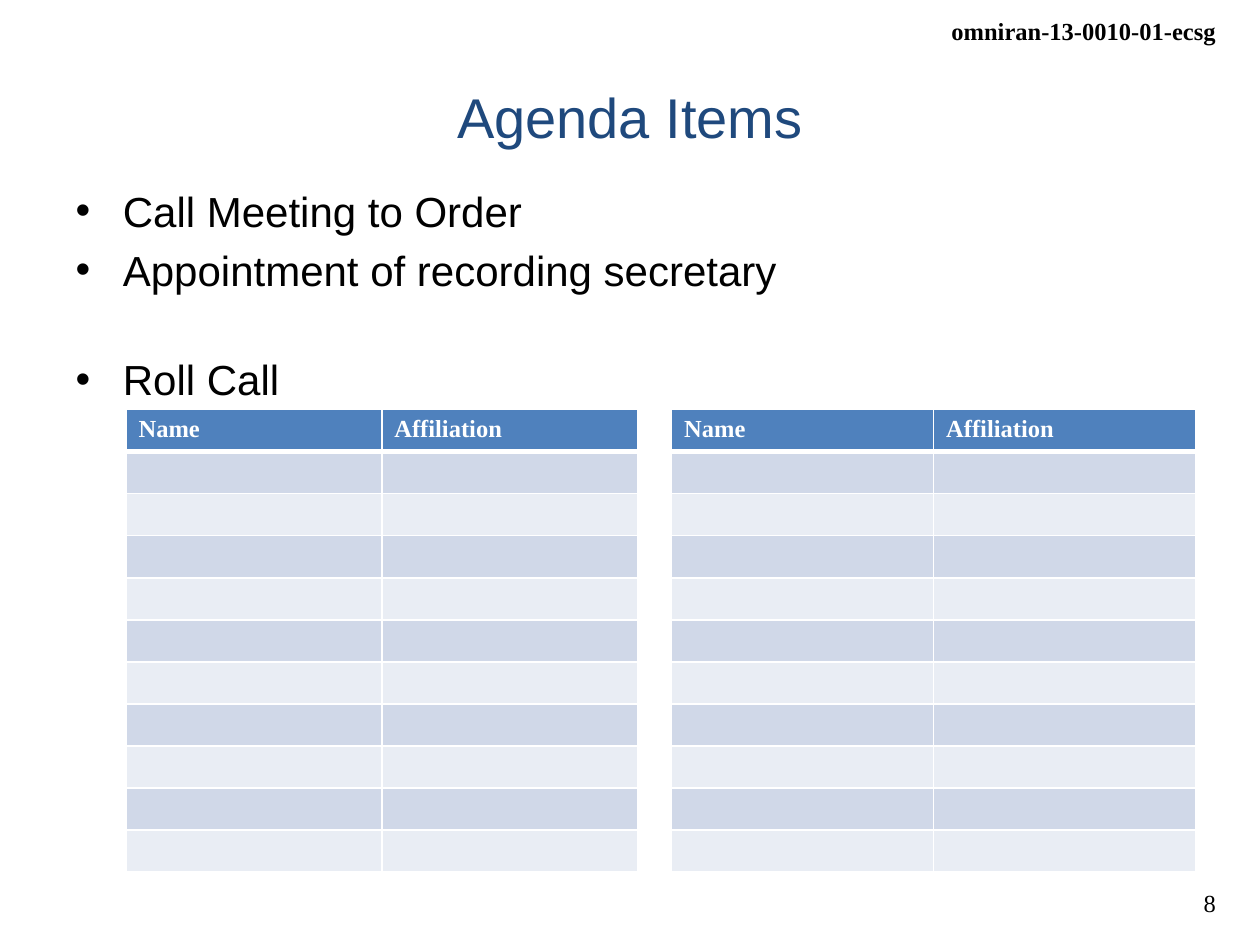
from lxml.etree import SubElement
from pptx import Presentation
from pptx.dml.color import RGBColor
from pptx.enum.text import MSO_ANCHOR, PP_ALIGN
from pptx.oxml.ns import qn
from pptx.util import Inches, Pt

BLACK = RGBColor(0x00, 0x00, 0x00)
WHITE = RGBColor(0xFF, 0xFF, 0xFF)
TITLE_BLUE = RGBColor(0x1F, 0x49, 0x7D)
HEADER_BLUE = RGBColor(0x4F, 0x81, 0xBD)
BANDS = [RGBColor(0xE9, 0xED, 0xF4), RGBColor(0xD0, 0xD8, 0xE8)]
SANS, SERIF = "Arial", "Times New Roman"

AGENDA = ["Call Meeting to Order", "Appointment of recording secretary", "Roll Call"]
HEADINGS = ["Name", "Affiliation", "", "Name", "Affiliation"]
COLUMN_WIDTHS = [2.03, 2.03, 0.27, 2.08, 2.08]
ROW_COUNT, ROW_HEIGHT = 11, 0.32
GAP_COLUMN = 2
TABLE_SIZE = 14


def place(shape, left, top, width, height):
    shape.left, shape.top = Inches(left), Inches(top)
    shape.width, shape.height = Inches(width), Inches(height)


def style(paragraph, font_name, size, color, bold=False):
    for run in paragraph.runs:
        font = run.font
        font.name, font.size, font.bold = font_name, Pt(size), bold
        font.color.rgb = color


def add_margin_text(slide, text, top, width, right=9.75, bold=False):
    """Add a right-aligned running text that ends at the right margin."""
    box = slide.shapes.add_textbox(
        Inches(right - width), Inches(top), Inches(width), Inches(0.34))
    paragraph = box.text_frame.paragraphs[0]
    paragraph.text = text
    paragraph.alignment = PP_ALIGN.RIGHT
    style(paragraph, SERIF, 14, BLACK, bold)


def fill_title(title):
    place(title, 0.5, 0.3, 9, 1.25)
    frame = title.text_frame
    frame.text = "Agenda Items"
    frame.vertical_anchor = MSO_ANCHOR.MIDDLE
    frame.paragraphs[0].alignment = PP_ALIGN.CENTER
    style(frame.paragraphs[0], SANS, 32, TITLE_BLUE)


def fill_agenda(body):
    place(body, 0.5, 1.42, 9, 5.28)
    frame = body.text_frame
    frame.text = "\n".join(AGENDA)
    for paragraph in frame.paragraphs:
        style(paragraph, SANS, 24, BLACK)
    frame.paragraphs[-1].space_before = Pt(34)


def set_borders(cell, bottom_width):
    properties = cell._tc.get_or_add_tcPr()
    widths = {"a:lnL": 1, "a:lnR": 1, "a:lnT": 1, "a:lnB": bottom_width}
    for position, (tag, width) in enumerate(widths.items()):
        line = SubElement(properties, qn(tag), w=str(Pt(width)))
        fill = SubElement(line, qn("a:solidFill"))
        SubElement(fill, qn("a:srgbClr"), val=str(WHITE))
        properties.insert(position, line)


def fill_cell(cell, text, color, bottom_width):
    paragraph = cell.text_frame.paragraphs[0]
    if text:
        paragraph.text = text
        style(paragraph, SERIF, TABLE_SIZE, WHITE, bold=True)
    else:
        # An empty cell takes its line height from the paragraph end mark.
        end_mark = SubElement(paragraph._p, qn("a:endParaRPr"), sz=str(TABLE_SIZE * 100))
        SubElement(end_mark, qn("a:latin"), typeface=SERIF)
    cell.fill.solid()
    cell.fill.fore_color.rgb = color
    set_borders(cell, bottom_width)


def add_roll_call(slide):
    table = slide.shapes.add_table(
        ROW_COUNT, len(HEADINGS), Inches(1), Inches(3.25),
        Inches(sum(COLUMN_WIDTHS)), Inches(ROW_COUNT * ROW_HEIGHT)).table
    for column, width in zip(table.columns, COLUMN_WIDTHS):
        column.width = Inches(width)
    for row_index, row in enumerate(table.rows):
        is_header = row_index == 0
        row_color = HEADER_BLUE if is_header else BANDS[row_index % 2]
        for column_index, cell in enumerate(row.cells):
            fill_cell(cell,
                      HEADINGS[column_index] if is_header else "",
                      WHITE if column_index == GAP_COLUMN else row_color,
                      3 if is_header else 1)


def main():
    deck = Presentation()
    deck.slide_width, deck.slide_height = Inches(10), Inches(7.5)
    slide = deck.slides.add_slide(deck.slide_layouts[1])
    add_margin_text(slide, "omniran-13-0010-01-ecsg", 0.08, 2.32, bold=True)
    add_margin_text(slide, "8", 7, 0.43)
    fill_title(slide.shapes.title)
    fill_agenda(slide.placeholders[1])
    add_roll_call(slide)
    deck.save("out.pptx")


if __name__ == "__main__":
    main()
